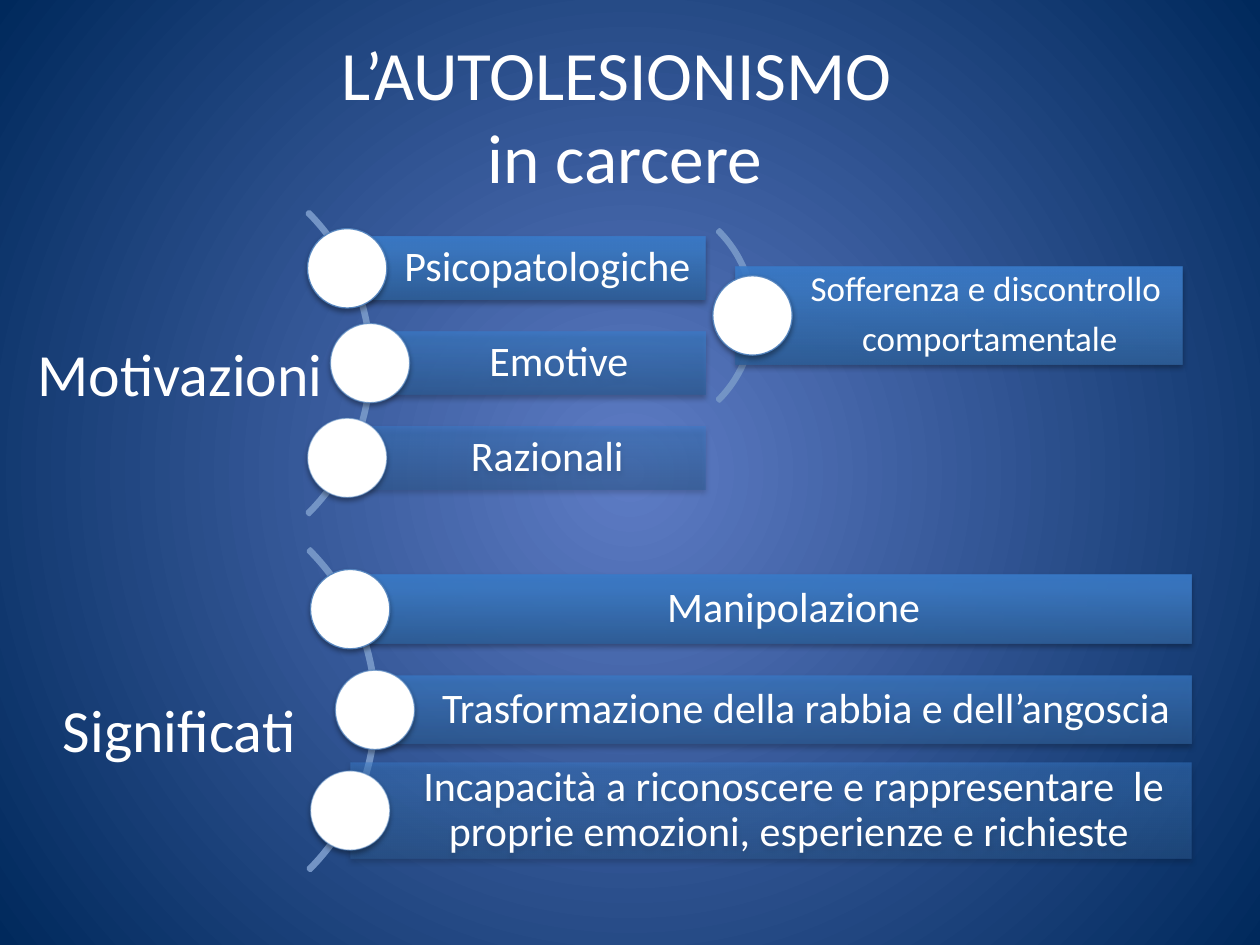
"""Build the slide on self-harm in prison: its motivations and its meanings."""
from dataclasses import dataclass

from pptx import Presentation
from pptx.dml.color import RGBColor
from pptx.enum.shapes import MSO_SHAPE as Shape
from pptx.enum.text import MSO_ANCHOR as Anchor, MSO_AUTO_SIZE as AutoSize, PP_ALIGN as Align
from pptx.oxml import parse_xml
from pptx.oxml.ns import nsdecls, qn
from pptx.util import Cm, Pt


@dataclass(frozen=True)
class Theme:
    font: str = "Calibri"
    light: str = "FFFFFF"
    arc: str = "7394C5"
    dot_edge: str = "4F81BD"
    backdrop: tuple = ((0, "5E7CC5"), (100, "00295C"))
    bar: tuple = ((0, "2F5F99"), (80, "3D7CC7"), (100, "3A7CCB"))
    title: float = 39.6
    label: float = 34.2
    item: float = 24
    detail: float = 20


THEME = Theme()
DOT = 1.6


@dataclass(frozen=True)
class Branch:
    items: tuple
    heights: tuple
    middle: float
    step: float
    left: float
    right: float
    indent: float
    inset: float
    arc_left: float
    arc_size: float
    arc_depth: float
    size: float = THEME.item
    dot_shift: float = 0


BRANCHES = (
    Branch(("Psicopatologiche", "Emotive", "Razionali"), (1.27, 1.27, 1.27),
           middle=7.32, step=1.91, left=7, right=14.22, indent=0.46, inset=1.02,
           arc_left=-1.14, arc_size=8.64, arc_depth=0.007),
    Branch(("Sofferenza e discontrollo \ncomportamentale",), (1.96,),
           middle=6.36, step=0, left=14.83, right=23.83, indent=0, inset=1.42,
           arc_left=10.34, arc_size=4.88, arc_depth=0.012,
           size=THEME.detail, dot_shift=0.34),
    Branch(("Manipolazione", "Trasformazione della rabbia e dell’angoscia",
            "Incapacità a riconoscere e rappresentare  le proprie emozioni, "
            "esperienze e richieste "), (1.37, 1.37, 1.93),
           middle=14.31, step=2.03, left=7.06, right=24.02, indent=0.5, inset=1.09,
           arc_left=-1.57, arc_size=9.17, arc_depth=0.007),
)


def write(frame, text, size, align=Align.CENTER, insets=(0.25, 0.13, 0.25, 0.13),
          line_spacing=None, space_after=0):
    """Fill a text frame with one paragraph per line of text."""
    frame.word_wrap = True
    frame.auto_size = AutoSize.NONE
    frame.vertical_anchor = Anchor.MIDDLE
    frame.margin_left, frame.margin_top, frame.margin_right, frame.margin_bottom = map(Cm, insets)
    for number, line in enumerate(text.split("\n")):
        paragraph = frame.add_paragraph() if number else frame.paragraphs[0]
        paragraph.text = line
        paragraph.alignment = align
        paragraph.line_spacing = line_spacing
        paragraph.space_after = Pt(space_after)
        for run in paragraph.runs:
            run.font.name = THEME.font
            run.font.size = Pt(size)
            run.font.color.rgb = RGBColor.from_string(THEME.light)


def set_gradient(properties, stops, direction, alpha=100):
    """Replace a solid fill by a gradient of the given stops."""
    marks = "".join(
        f'<a:gs pos="{position * 1000}"><a:srgbClr val="{color}">'
        f'<a:alpha val="{alpha * 1000}"/></a:srgbClr></a:gs>' for position, color in stops)
    gradient = parse_xml(f'<a:gradFill {nsdecls("a")} rotWithShape="1">'
                         f'<a:gsLst>{marks}</a:gsLst>{direction}</a:gradFill>')
    properties.replace(properties.find(qn("a:solidFill")), gradient)


def add_shadow(shape):
    """Give a shape a soft shadow that falls straight down."""
    shape.shadow.inherit = False
    shape.element.spPr.find(qn("a:effectLst")).append(parse_xml(
        f'<a:outerShdw {nsdecls("a")} blurRad="{Pt(3.1)}" dist="{Pt(1.8)}" dir="5400000" '
        'rotWithShape="0"><a:srgbClr val="000000"><a:alpha val="35000"/></a:srgbClr>'
        '</a:outerShdw>'))


def add_arc(slide, branch):
    """Draw the thin arc that carries the dots of a branch."""
    arc = slide.shapes.add_shape(
        Shape.BLOCK_ARC, Cm(branch.arc_left), Cm(branch.middle - branch.arc_size / 2),
        Cm(branch.arc_size), Cm(branch.arc_size))
    for index, value in enumerate((189, 27, branch.arc_depth)):
        arc.adjustments[index] = value
    arc.fill.background()
    arc.line.color.rgb = RGBColor.from_string(THEME.arc)
    arc.line.width = Pt(2)
    arc.shadow.inherit = False


def add_bar(slide, branch, text, left, middle, height, alpha):
    """Draw a translucent bar with its text."""
    bar = slide.shapes.add_shape(Shape.RECTANGLE, Cm(left), Cm(middle - height / 2),
                                 Cm(branch.right - left), Cm(height))
    bar.fill.solid()
    set_gradient(bar.element.spPr, THEME.bar, '<a:lin ang="16200000" scaled="0"/>', alpha)
    bar.line.fill.background()
    add_shadow(bar)
    write(bar.text_frame, text, branch.size, insets=(branch.inset, 0.17, 0.17, 0.17),
          line_spacing=0.9, space_after=branch.size * 0.35)


def add_dot(slide, center, middle, alpha):
    """Draw the white dot at the head of a bar."""
    dot = slide.shapes.add_shape(Shape.OVAL, Cm(center - DOT / 2), Cm(middle - DOT / 2),
                                 Cm(DOT), Cm(DOT))
    dot.fill.solid()
    dot.fill.fore_color.rgb = RGBColor.from_string(THEME.light)
    dot.line.color.rgb = RGBColor.from_string(THEME.dot_edge)
    dot.line.width = Pt(0.75)
    edge = dot.element.spPr.find(qn("a:ln")).find(".//" + qn("a:srgbClr"))
    edge.append(parse_xml(f'<a:alpha {nsdecls("a")} val="{alpha * 1000}"/>'))
    add_shadow(dot)


def add_branch(slide, branch):
    """Draw an arc with its evenly spaced bars and dots, fading downwards."""
    add_arc(slide, branch)
    center_row = (len(branch.items) - 1) / 2
    for row, (text, height) in enumerate(zip(branch.items, branch.heights)):
        middle = branch.middle + (row - center_row) * branch.step
        left = branch.left + (branch.indent if row == center_row else 0)
        alpha = 90 - 20 * row
        add_bar(slide, branch, text, left, middle, height, alpha)
        add_dot(slide, left + branch.dot_shift, middle, alpha)


def add_label(slide, text, left, middle, width, height=1.6):
    """Write the large label beside a branch."""
    label = slide.shapes.add_textbox(Cm(left), Cm(middle - height / 2), Cm(width), Cm(height))
    write(label.text_frame, text, THEME.label, align=Align.LEFT, insets=(0, 0, 0, 0))


def add_title(slide, text):
    """Place and fill the title placeholder."""
    title = slide.shapes.title
    title.left, title.top, title.width, title.height = Cm(1.09), Cm(0.91), Cm(23.01), Cm(2.79)
    write(title.text_frame, text, THEME.title)


def main():
    """Build and save the slide."""
    deck = Presentation()
    deck.slide_width, deck.slide_height = Cm(25.4), Cm(19.05)
    slide = deck.slides.add_slide(deck.slide_layouts[5])
    slide.background.fill.solid()
    set_gradient(slide.element.find(".//" + qn("p:bgPr")), THEME.backdrop,
                 '<a:path path="circle"><a:fillToRect l="50000" t="50000" r="50000" b="50000"/>'
                 '</a:path>')
    add_title(slide, "L’AUTOLESIONISMO \vin carcere")
    add_label(slide, "Motivazioni", 0.76, 7.52, 6)
    add_label(slide, "Significati", 1.27, 14.69, 5.5)
    for branch in BRANCHES:
        add_branch(slide, branch)
    deck.save("out.pptx")


if __name__ == "__main__":
    main()
